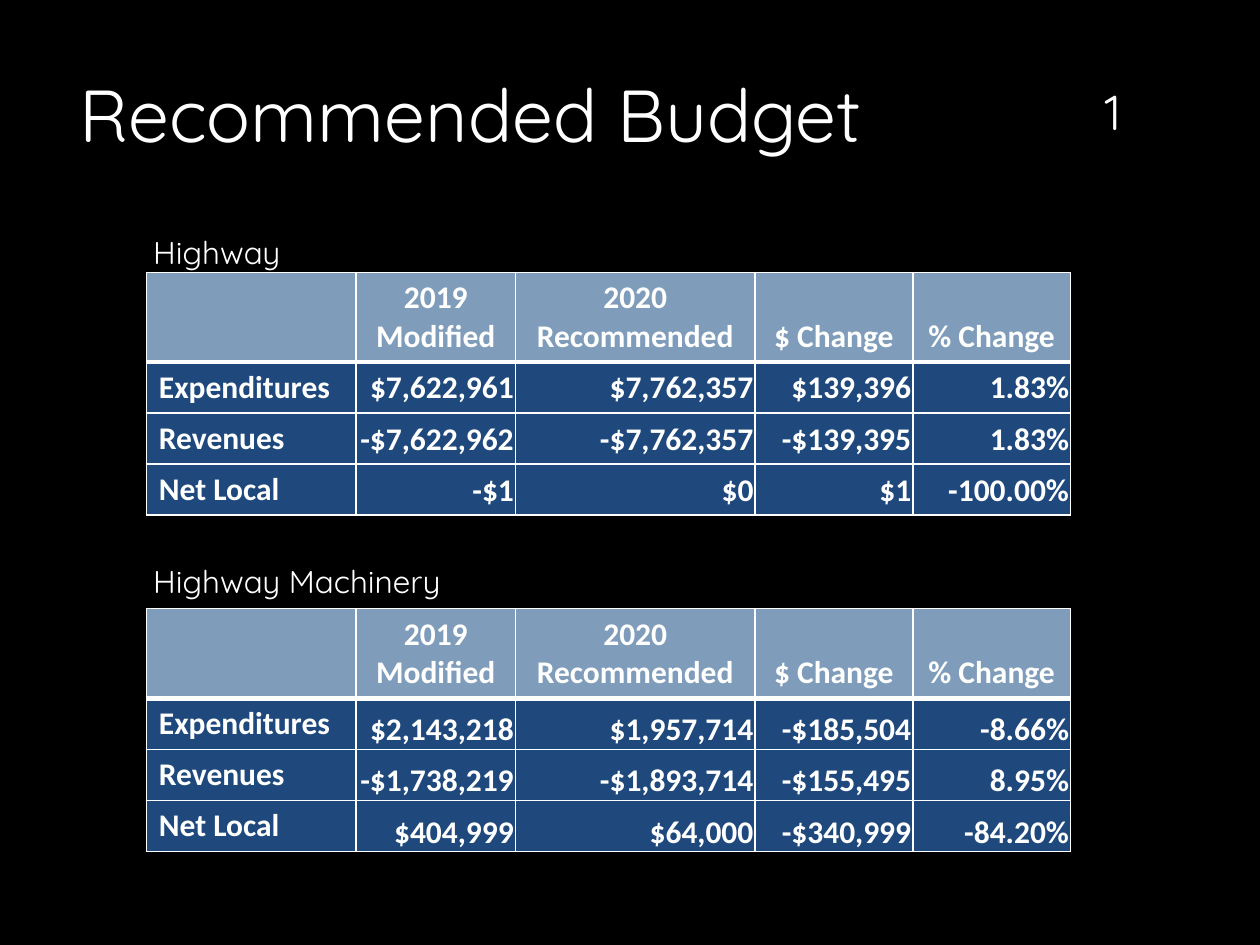
from lxml import etree
from pptx import Presentation
from pptx.dml.color import RGBColor
from pptx.enum import text
from pptx.oxml import ns
from pptx.util import Cm, Pt

BLACK = RGBColor(0x00, 0x00, 0x00)
WHITE = RGBColor(0xFF, 0xFF, 0xFF)
STEEL = RGBColor(0x7F, 0x9D, 0xBB)
NAVY = RGBColor(0x1F, 0x49, 0x7D)

TOP, MID, LOW = (text.MSO_ANCHOR.TOP, text.MSO_ANCHOR.MIDDLE,
                 text.MSO_ANCHOR.BOTTOM)
LEFT, MAIN, RIGHT = (text.PP_ALIGN.LEFT, text.PP_ALIGN.CENTER,
                     text.PP_ALIGN.RIGHT)

LABELS = [
    ("Recommended Budget", (1.35, 1.27, 19.6, 3.89), 42, LEFT, TOP),
    ("1", (21.56, 0.81, 1.75, 2.14), 28, MAIN, LOW),
    ("Highway", (2.84, 4.57, 3.23, 1.02), 18, LEFT, TOP),
    ("Highway Machinery", (2.84, 11.2, 6.71, 1.02), 18, LEFT, TOP),
]
HEAD = ["", "2019\nModified", "2020\nRecommended", "$ Change", "% Change"]
TABLES = [
    (5.49, MID, [
        ["Expenditures", "$7,622,961", "$7,762,357", "$139,396", "1.83%"],
        ["Revenues", "-$7,622,962", "-$7,762,357", "-$139,395", "1.83%"],
        ["Net Local", "-$1", "$0", "$1", "-100.00%"],
    ]),
    (12.27, LOW, [
        ["Expenditures", "$2,143,218", "$1,957,714", "-$185,504", "-8.66%"],
        ["Revenues", "-$1,738,219", "-$1,893,714", "-$155,495", "8.95%"],
        ["Net Local", "$404,999", "$64,000", "-$340,999", "-84.20%"],
    ]),
]
X = 2.95
COLS = [4.23, 3.21, 4.83, 3.18, 3.18]
ROWS = [1.8, 1.03, 1.03, 1.03]
TIGHT = {"margin_left": Cm(0.03), "margin_right": Cm(0.03),
         "margin_top": Cm(0.03), "margin_bottom": Cm(0)}


def apply(item, form):
    for key, val in form.items():
        setattr(item, key, val)


def write(frame, words, size, align, face, bold):
    frame.text = words
    for par in frame.paragraphs:
        par.alignment = align
        apply(par.font, {"size": Pt(size), "name": face, "bold": bold})
        par.font.color.rgb = WHITE
        for run in par.runs:
            apply(run.font, {"size": Pt(size), "name": face, "bold": bold})
            run.font.color.rgb = WHITE


def edge(cell, side, width):
    props = cell._tc.get_or_add_tcPr()
    line = etree.SubElement(props, ns.qn("a:ln" + side), w=str(Pt(width)))
    fill = etree.SubElement(line, ns.qn("a:solidFill"))
    etree.SubElement(fill, ns.qn("a:srgbClr"), val=str(WHITE))


def label(slide, words, box, size, align, anchor):
    frame = slide.shapes.add_textbox(*map(Cm, box)).text_frame
    apply(frame, {"word_wrap": True, "vertical_anchor": anchor})
    write(frame, words, size, align, "Quicksand", False)


def table(slide, y, anchor, body):
    data = [HEAD] + body
    grid = slide.shapes.add_table(
        len(ROWS), len(COLS), Cm(X), Cm(y), Cm(sum(COLS)), Cm(sum(ROWS))).table
    for col, width in zip(grid.columns, COLS):
        col.width = Cm(width)
    for row, high in zip(grid.rows, ROWS):
        row.height = Cm(high)
    for r, row in enumerate(data):
        for c, words in enumerate(row):
            cell = grid.cell(r, c)
            if r == 0:
                align, form = MAIN, {"vertical_anchor": LOW}
            elif c == 0:
                align, form = LEFT, {"vertical_anchor": TOP}
            else:
                align, form = RIGHT, {"vertical_anchor": anchor, **TIGHT}
            apply(cell, form)
            write(cell.text_frame, words, 18, align, "Calibri", True)
            for side in "LRTB":
                thick = (r, side) in [(0, "B"), (1, "T")]
                edge(cell, side, 3 if thick else 1)
            cell.fill.solid()
            cell.fill.fore_color.rgb = NAVY if r else STEEL


def main():
    deck = Presentation()
    apply(deck, {"slide_width": Cm(25.4), "slide_height": Cm(19.05)})
    slide = deck.slides.add_slide(deck.slide_layouts[6])
    slide.background.fill.solid()
    slide.background.fill.fore_color.rgb = BLACK
    for item in TABLES:
        table(slide, *item)
    for item in LABELS:
        label(slide, *item)
    deck.save("out.pptx")


if __name__ == "__main__":
    main()
